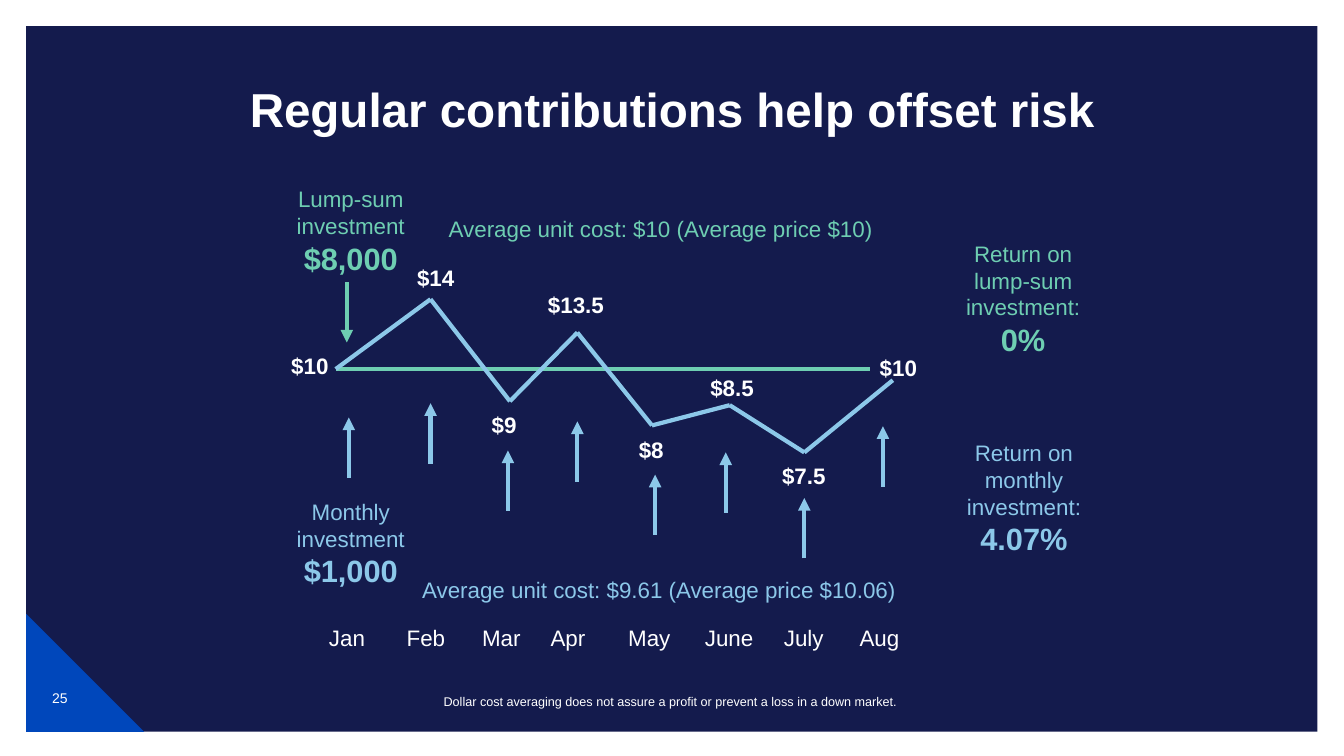
"""Builds the slide on lump-sum and monthly investing."""
import pptx
import pptx.dml.color
import pptx.enum.shapes
import pptx.enum.text
import pptx.oxml
import pptx.oxml.ns
import pptx.util

Cm = pptx.util.Cm
Pt = pptx.util.Pt
hex_color = pptx.dml.color.RGBColor.from_string
Shape = pptx.enum.shapes.MSO_SHAPE
Align = pptx.enum.text.PP_ALIGN
Anchor = pptx.enum.text.MSO_ANCHOR

NAVY, BLUE, WHITE = "141B4D", "0047BB", "FFFFFF"
LUMP_SUM, MONTHLY = "6ECEB2", "8CC8E9"

deck = pptx.Presentation()
deck.slide_width, deck.slide_height = Cm(33.87), Cm(19.05)
slide = deck.slides.add_slide(deck.slide_layouts[5])


def write(text, left, top, width, height, holder=None, size=16, color=WHITE, bold=False,
          figure="", align=Align.CENTER, anchor=Anchor.TOP, side_inset=0.25, spacing=1.0):
    box = holder or slide.shapes.add_textbox(0, 0, 0, 0)
    box.left, box.top, box.width, box.height = Cm(left), Cm(top), Cm(width), Cm(height)
    frame = box.text_frame
    frame.word_wrap = True
    frame.auto_size = pptx.enum.text.MSO_AUTO_SIZE.NONE
    frame.vertical_anchor = anchor
    frame.margin_left = frame.margin_right = Cm(side_inset)
    paragraph = frame.paragraphs[0]
    paragraph.alignment = align
    paragraph.line_spacing = spacing
    parts = [(text, size, bold)] + ([(figure, 22, True)] if figure else [])
    for words, points, heavy in parts:
        run = paragraph.add_run()
        run.text = words
        run.font.name = "Arial"
        run.font.size = Pt(points)
        run.font.bold = heavy
        run.font.color.rgb = hex_color(color)


def draw_line(start, end, color, arrow=False):
    line = slide.shapes.add_connector(
        pptx.enum.shapes.MSO_CONNECTOR.STRAIGHT, *[Cm(n) for n in (*start, *end)])
    line.line.color.rgb = hex_color(color)
    line.line.width = Pt(3)
    if arrow:
        head = pptx.oxml.parse_xml(f'<a:tailEnd {pptx.oxml.ns.nsdecls("a")} type="triangle"/>')
        line.line._get_or_add_ln().append(head)
    properties = line.element.spPr
    properties.append(pptx.oxml.parse_xml(f'<a:effectLst {pptx.oxml.ns.nsdecls("a")}/>'))


for outline, left, top, width, height, color in [
    (Shape.RECTANGLE, 0.66, 0.66, 32.54, 17.78, NAVY),
    (Shape.RIGHT_TRIANGLE, 0.66, 15.47, 2.97, 2.97, BLUE),
]:
    panel = slide.shapes.add_shape(outline, Cm(left), Cm(top), Cm(width), Cm(height))
    panel.shadow.inherit = False
    panel.fill.solid()
    panel.fill.fore_color.rgb = hex_color(color)
    panel.line.fill.background()

write("25", 0.81, 16.84, 1.4, 1.47, size=10, anchor=Anchor.MIDDLE)

title = slide.shapes.title
panel.element.getparent().append(title.element)
write("Regular contributions help offset risk", 2.44, 2.06, 29.01, 1.65,
      holder=title, size=34, bold=True, side_inset=0, spacing=0.9)

# month, month left, price point, price label, label corner, arrow tip
months = [
    ("Jan", 7.87, (8.46, 9.3), "$10", (7.09, 8.76), (8.79, 10.52)),
    ("Feb", 9.86, (10.85, 7.54), "$14", (10.26, 6.53), (10.85, 10.16)),
    ("Mar", 11.76, (12.85, 10.11), "$9", (12.14, 10.24), (12.8, 11.35)),
    ("Apr", 13.44, (14.55, 8.38), "$13.5", (13.56, 7.21), (14.55, 10.62)),
    ("May", 15.49, (16.43, 10.72), "$8", (15.85, 10.87), (16.51, 11.96)),
    ("June", 17.5, (18.39, 10.21), "$8.5", (17.65, 9.3), (18.29, 11.4)),
    ("July", 19.38, (20.27, 11.4), "$7.5", (19.46, 11.51), (20.27, 12.55)),
    ("Aug", 21.29, (22.5, 9.58), "$10", (21.92, 8.79), (22.25, 10.74)),
]
arrow_length = 1.52

draw_line((8.46, 9.3), (21.92, 9.3), LUMP_SUM)
price_points = [month[2] for month in months]
for start, end in zip(price_points, price_points[1:]):
    draw_line(start, end, MONTHLY)
draw_line((8.74, 7.11), (8.74, 7.11 + arrow_length), LUMP_SUM, arrow=True)

for month, month_left, _, price, price_corner, (tip_x, tip_y) in months:
    draw_line((tip_x, tip_y + arrow_length), (tip_x, tip_y), MONTHLY, arrow=True)
    write(month, month_left, 15.6, 1.75, 0.94)
    write(price, *price_corner, 2.03, 0.94, bold=True, align=Align.LEFT)

for caption, figure, left, top, width, height, color in [
    ("Lump-sum investment ", "$8,000", 7.09, 4.55, 3.5, 2.57, LUMP_SUM),
    ("Monthly investment ", "$1,000", 7.09, 12.42, 3.5, 2.57, MONTHLY),
    ("Return on lump-sum investment: ", "0%", 23.6, 5.92, 4.37, 3.25, LUMP_SUM),
    ("Return on monthly investment: ", "4.07%", 23.62, 10.95, 4.37, 3.25, MONTHLY),
]:
    write(caption, left, top, width, height, color=color, figure=figure)

write("Average unit cost: $10 (Average price $10)", 10.26, 5.38, 12.78, 0.86,
      color=LUMP_SUM, side_inset=0, spacing=0.9)
write("Average unit cost: $9.61 (Average price $10.06)", 10.39, 14.4, 12.98, 0.94,
      color=MONTHLY, align=Align.LEFT)
write("Dollar cost averaging does not assure a profit or prevent a loss in a down market.",
      6.96, 17.37, 19.86, 0.64, size=9)

deck.save("out.pptx")
